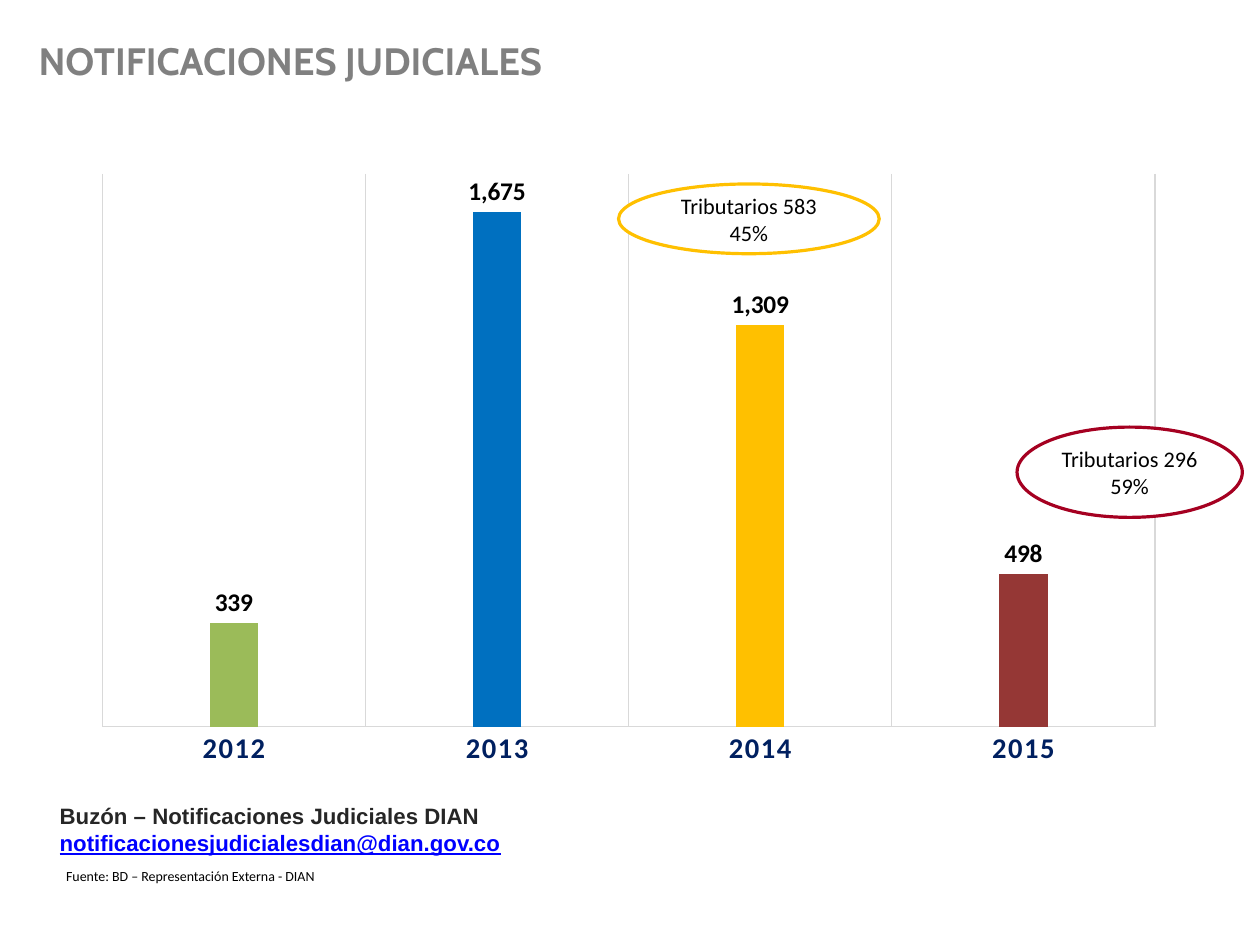
from dataclasses import dataclass
from typing import Any, NamedTuple

import pptx
import pptx.chart.data
import pptx.dml.color
import pptx.enum.chart
import pptx.enum.shapes
import pptx.enum.text
import pptx.oxml
import pptx.oxml.ns
import pptx.util

SLIDE_WIDTH = pptx.util.Cm(28)
SLIDE_HEIGHT = pptx.util.Cm(21)
BLACK, WHITE, GRID_GREY = "000000", "FFFFFF", "D9D9D9"


class Area(NamedTuple):
    """Left, top, width and height as percentages of the slide."""
    left: float
    top: float
    width: float
    height: float

    def lengths(self) -> tuple[int, ...]:
        sides = (SLIDE_WIDTH, SLIDE_HEIGHT) * 2
        return tuple(round(side * share / 100) for side, share in zip(sides, self))


class Line(NamedTuple):
    text: str
    font: dict[str, Any]


@dataclass(frozen=True)
class Callout:
    area: Area
    outline: str
    lines: tuple[str, ...]


@dataclass(frozen=True)
class Year:
    label: str
    notifications: int
    color: str


def rgb(color: str) -> pptx.dml.color.RGBColor:
    return pptx.dml.color.RGBColor.from_string(color)


def font_format(name: str, size: float, color: str, **extra: Any) -> dict[str, Any]:
    return {"name": name, "size": pptx.util.Pt(size), "color": color, **extra}


def set_format(target: Any, values: dict[str, Any]) -> None:
    for attribute, value in values.items():
        if attribute == "color":
            target.color.rgb = rgb(value)
        else:
            setattr(target, attribute, value)


def fill(target: Any, color: str) -> None:
    target.fill.solid()
    target.fill.fore_color.rgb = rgb(color)


def place(target: Any, area: Area) -> None:
    set_format(target, dict(zip(("left", "top", "width", "height"), area.lengths())))


def write(frame: Any, lines: list[Line], frame_format: dict[str, Any],
          alignment: Any = pptx.enum.text.PP_ALIGN.LEFT) -> None:
    set_format(frame, frame_format)
    for index, line in enumerate(lines):
        paragraph = frame.add_paragraph() if index else frame.paragraphs[0]
        paragraph.alignment = alignment
        run = paragraph.add_run()
        run.text = line.text
        set_format(run.font, line.font)


def draw_callout(slide: Any, callout: Callout) -> None:
    ellipse = slide.shapes.add_shape(
        pptx.enum.shapes.MSO_SHAPE.OVAL, *callout.area.lengths())
    ellipse.shadow.inherit = False
    fill(ellipse, WHITE)
    set_format(ellipse.line, {"color": callout.outline, "width": pptx.util.Pt(2)})
    write(ellipse.text_frame, [Line(text, CALLOUT_FONT) for text in callout.lines],
          CALLOUT_FRAME, pptx.enum.text.PP_ALIGN.CENTER)


def fix_plot_area(chart: Any, x: float, y: float, w: float, h: float) -> None:
    """Pin the inner plot area, given as shares of the chart."""
    plot_area = chart.plots[0]._element.getparent()
    for layout in plot_area.findall(pptx.oxml.ns.qn("c:layout")):
        plot_area.remove(layout)
    settings = {"layoutTarget": "inner", "xMode": "edge", "yMode": "edge",
                "x": x, "y": y, "w": w, "h": h}
    items = "".join(f'<c:{tag} val="{value}"/>' for tag, value in settings.items())
    plot_area.insert(0, pptx.oxml.parse_xml(
        f'<c:layout {pptx.oxml.ns.nsdecls("c")}>'
        f"<c:manualLayout>{items}</c:manualLayout></c:layout>"))


def draw_notifications(slide: Any, years: list[Year], area: Area) -> None:
    data = pptx.chart.data.CategoryChartData(number_format="#,##0")
    data.categories = [year.label for year in years]
    data.add_series("Series 1", [year.notifications for year in years])
    chart = slide.shapes.add_chart(
        pptx.enum.chart.XL_CHART_TYPE.COLUMN_CLUSTERED, *area.lengths(), data).chart
    set_format(chart, {"has_legend": False, "has_title": False})
    set_format(chart.font, font_format("Calibri", 10, BLACK))
    fix_plot_area(chart, 0.041, 0.025, 0.959, 0.842)

    bars = chart.plots[0]
    set_format(bars, {"gap_width": 444, "overlap": -90, "vary_by_categories": False,
                      "has_data_labels": True})
    set_format(bars.data_labels, {
        "show_value": True, "number_format": "#,##0", "number_format_is_linked": False,
        "position": pptx.enum.chart.XL_LABEL_POSITION.OUTSIDE_END})
    set_format(bars.data_labels.font, font_format("Calibri", 16, BLACK, bold=True))
    fill(bars.series[0].format, "4F81BD")
    for index, year in enumerate(years):
        fill(bars.series[0].points[index].format, year.color)

    no_tick = pptx.enum.chart.XL_TICK_MARK.NONE
    year_axis = chart.category_axis
    set_format(year_axis, {"major_tick_mark": no_tick, "minor_tick_mark": no_tick,
                           "has_major_gridlines": True})
    for line in (year_axis.format.line, year_axis.major_gridlines.format.line):
        set_format(line, {"color": GRID_GREY, "width": pptx.util.Pt(0.75)})
    year_font = year_axis.tick_labels.font
    set_format(year_font, font_format("Calibri", 18, "002060", bold=True))
    year_font._element.set("spc", "100")
    set_format(chart.value_axis, {"visible": False, "has_major_gridlines": False,
                                  "minimum_scale": 0, "maximum_scale": 1800})


TOP_FRAME = {"word_wrap": True, "auto_size": pptx.enum.text.MSO_AUTO_SIZE.NONE,
             "vertical_anchor": pptx.enum.text.MSO_ANCHOR.TOP}
CALLOUT_FRAME = {"word_wrap": True, "margin_left": 0, "margin_right": 0,
                 "vertical_anchor": pptx.enum.text.MSO_ANCHOR.MIDDLE}
CALLOUT_FONT = font_format("Calibri", 14, BLACK)

TITLE = Line("NOTIFICACIONES JUDICIALES", font_format("Cabin", 24, "808080", bold=True))
MAILBOX = [
    Line("Buzón – Notificaciones Judiciales DIAN",
         font_format("Arial", 14, "262626", bold=True)),
    Line("notificacionesjudicialesdian@dian.gov.co",
         font_format("Arial", 14, "0000FF", bold=True, underline=True)),
]
SOURCE = Line("Fuente: BD – Representación Externa - DIAN",
              font_format("Calibri", 8.8, BLACK))
YEARS = [
    Year("2012", 339, "9BBB59"),
    Year("2013", 1675, "0070C0"),
    Year("2014", 1309, "FFC000"),
    Year("2015", 498, "953735"),
]
CALLOUTS = [
    Callout(Area(80.72, 45.2, 17.88, 9.55), "A50021", ("Tributarios 296", "59%")),
    Callout(Area(49.09, 19.47, 20.69, 7.38), "FFC000", ("Tributarios 583", "45%")),
]


def main() -> None:
    presentation = pptx.Presentation()
    presentation.slide_width = SLIDE_WIDTH
    presentation.slide_height = SLIDE_HEIGHT
    slide = presentation.slides.add_slide(presentation.slide_layouts[5])

    place(slide.shapes.title, Area(2.15, 3.32, 77.86, 6.05))
    write(slide.shapes.title.text_frame, [TITLE], TOP_FRAME)

    source = slide.shapes.add_textbox(*Area(4.36, 91.24, 22.05, 3.02).lengths())
    write(source.text_frame, [SOURCE], TOP_FRAME | {"word_wrap": False})
    mailbox = slide.shapes.add_textbox(*Area(3.84, 84.34, 45.01, 6.89).lengths())
    fill(mailbox, WHITE)
    write(mailbox.text_frame, MAILBOX, TOP_FRAME)

    draw_notifications(slide, YEARS, Area(4.54, 16.66, 87.18, 69.51))
    for callout in CALLOUTS:
        draw_callout(slide, callout)
    presentation.save("out.pptx")


if __name__ == "__main__":
    main()
